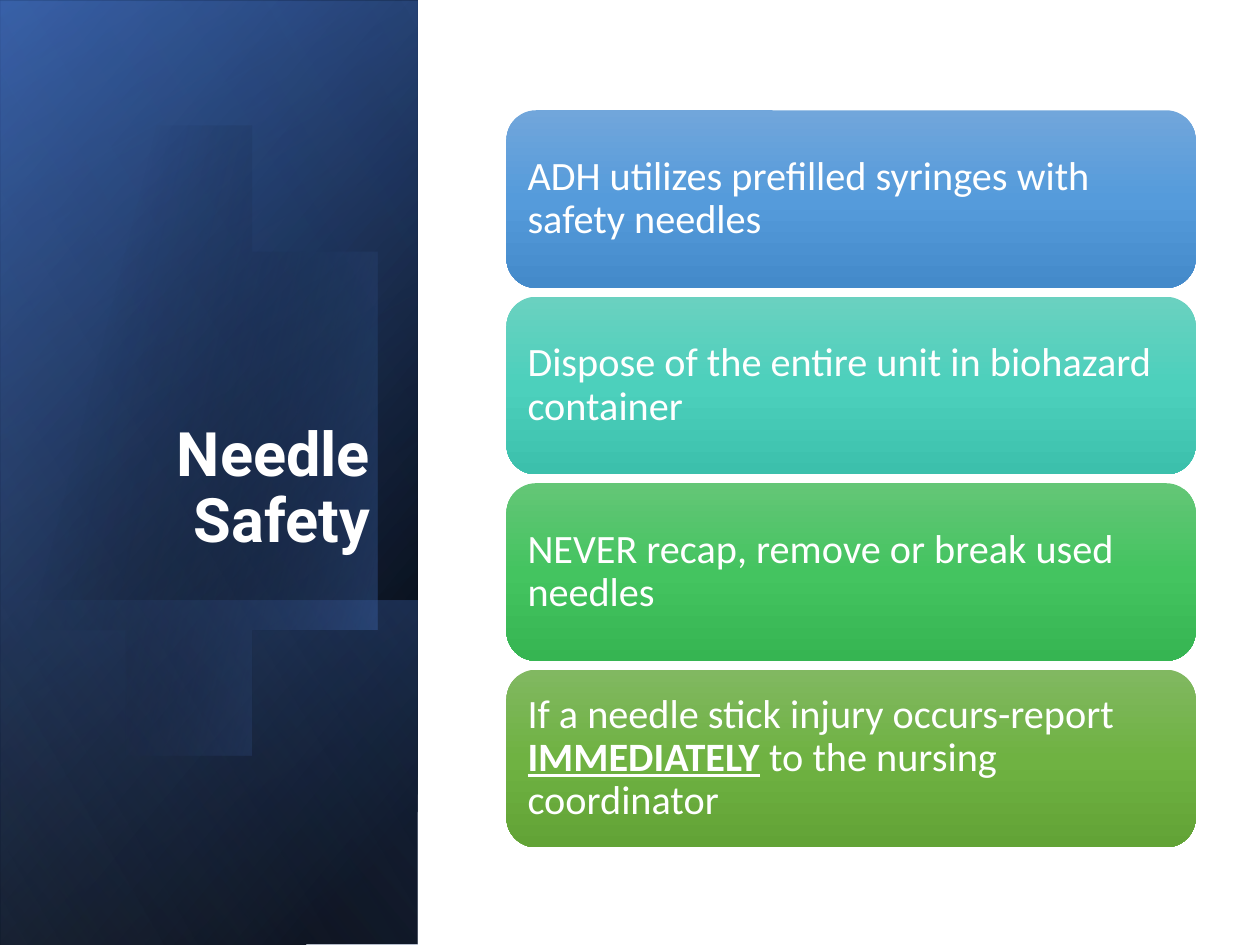
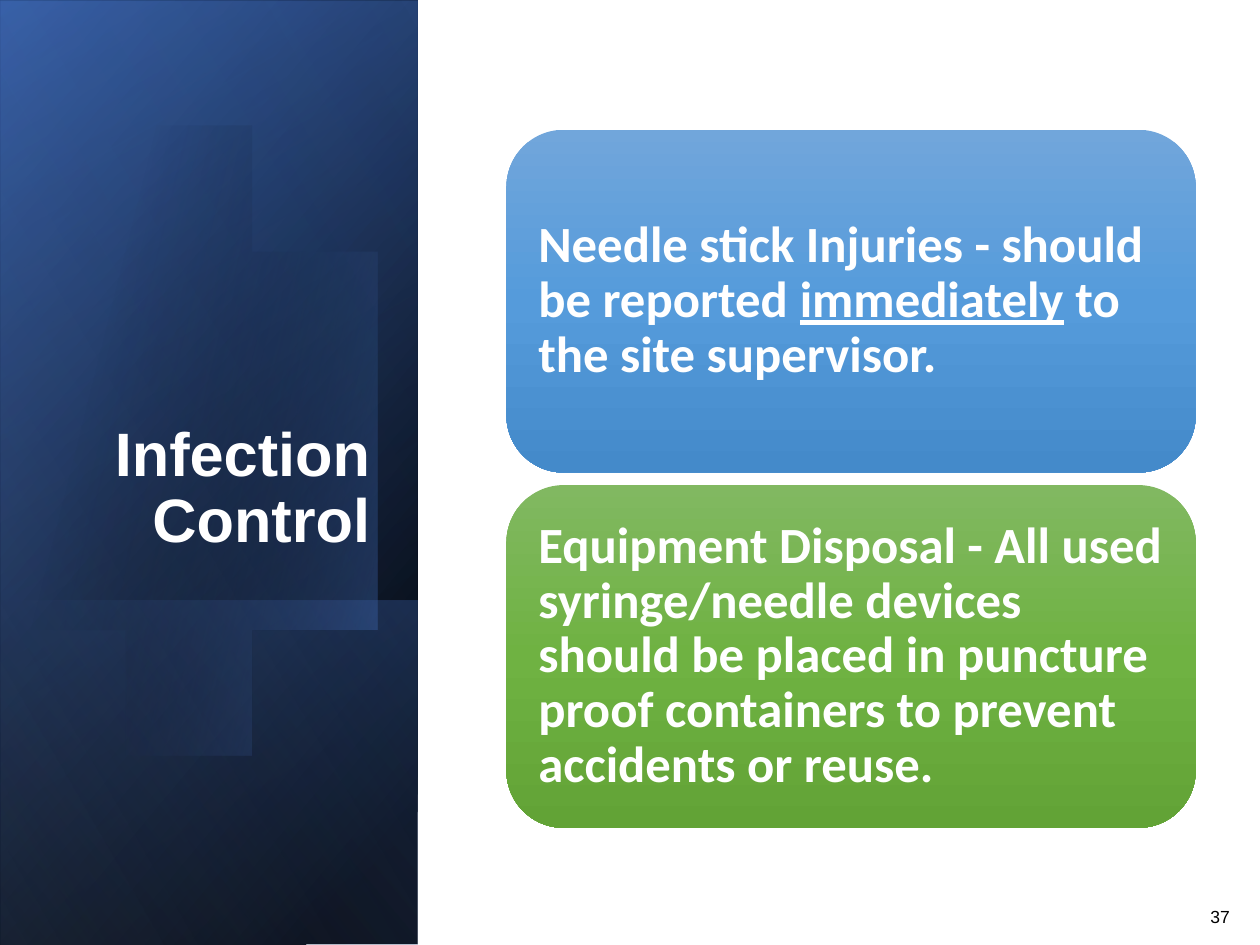
from pptx import Presentation
from pptx.dml.color import RGBColor
from pptx.enum.shapes import MSO_SHAPE
from pptx.enum.text import MSO_ANCHOR, MSO_AUTO_SIZE, PP_ALIGN
from pptx.oxml import parse_xml
from pptx.oxml.ns import nsdecls, qn
from pptx.util import Inches, Pt

RECTANGLE, ROUNDED = MSO_SHAPE.RECTANGLE, MSO_SHAPE.ROUNDED_RECTANGLE
MIDDLE, BOTTOM = MSO_ANCHOR.MIDDLE, MSO_ANCHOR.BOTTOM
LEFT, RIGHT = PP_ALIGN.LEFT, PP_ALIGN.RIGHT
NO_AUTOFIT = MSO_AUTO_SIZE.NONE
TITLE_ONLY = 5

COLORS = {
    "white": "FFFFFF", "black": "000000",
    "navy": "2F5597", "blue": "4472C4", "pale": "8FAADC",
}

# Card gradients, top to bottom: (position %, colour, opacity %)
CARD_FILLS = {
    name: [(0, top, 100), (50, middle, 100), (100, bottom, 100)]
    for name, top, middle, bottom in [
        ("blue", "71A6DB", "559BDB", "448ACA"),
        ("teal", "6AD1C0", "4CD0BC", "3CC0AC"),
        ("green", "64C677", "44C460", "36B552"),
        ("olive", "81B861", "6FB242", "62A336"),
    ]
}

# Content: each card is a fill name and its (text, is emphasised) runs
SLIDES = [
    {
        "title": "Needle Safety", "title_font": "Roboto", "page": None,
        "card_height": 1.41, "gap": 0.07, "inset": 0.1, "size": 23, "bold": False,
        "cards": [
            ("blue", [("ADH utilizes prefilled syringes with safety needles", False)]),
            ("teal", [("Dispose of the entire unit in biohazard container", False)]),
            ("green", [("NEVER recap, remove or break used needles", False)]),
            ("olive", [("If a needle stick injury occurs-report ", False),
                       ("IMMEDIATELY", True),
                       (" to the nursing coordinator", False)]),
        ],
    },
    {
        "title": "Infection Control", "title_font": "Arial", "page": "37",
        "card_height": 2.72, "gap": 0.1, "inset": 0.12, "size": 29, "bold": True,
        "cards": [
            ("blue", [("Needle stick Injuries - should be reported ", False),
                      ("immediately", True),
                      (" to the site supervisor.", False)]),
            ("olive", [("Equipment Disposal - All used syringe/needle devices should be "
                        "placed in puncture proof containers to prevent accidents or "
                        "reuse.", False)]),
        ],
    },
]

# Side panel layers, turned a quarter: (left, top, width, height), stops, angle
BACK_LAYERS = [
    ((-2.09, 2.09, 7.5, 3.31),
     [(8, COLORS["black"], 100), (100, COLORS["navy"], 100)], 50),
    ((-2.09, 2.11, 7.5, 3.31),
     [(0, COLORS["black"], 0), (99, COLORS["blue"], 46)], 30),
    ((0.29, 4.48, 2.74, 3.31),
     [(2, COLORS["blue"], 29), (100, COLORS["black"], 30)], 130),
]
FRONT_LAYER = ((-2.09, 2.09, 7.5, 3.31),
               [(0, COLORS["black"], 0), (99, COLORS["pale"], 11)], 120)

# Egg outline: start point, then lines (one point) and Bezier curves (three)
EGG_START = (0.96, 1.14)
EGG_SEGMENTS = [
    [(1.71, 1.22), (2.44, 1.92), (2.73, 2.9)],
    [(3.07, 4.12), (2.62, 5.31), (1.71, 5.57)],
    [(1.14, 5.74), (0.53, 5.5), (0.07, 5)],
    [(-0.03, 4.88)],
    [(-0.25, 1.66)],
    [(-0.15, 1.54)],
    [(0.02, 1.37), (0.22, 1.25), (0.45, 1.18)],
    [(0.62, 1.13), (0.79, 1.12), (0.96, 1.14)],
]
EGG_STOPS = [(29, COLORS["black"], 0), (100, COLORS["blue"], 43)]
EGG_ANGLE = 14
CURVE_STEPS = 24

TITLE_BOX = (0.48, 1.84, 2.56, 2.62)
PAGE_BOX = (9.46, 7.01, 0.4, 0.4)
CARD_LEFT, CARD_WIDTH, CARDS_CENTER = 4.02, 5.47, 3.8


def box(values):
    return [Inches(value) for value in values]


def paint(shape, stops, angle):
    """Give the shape a linear gradient, no line and no shadow."""
    shape.shadow.inherit = False
    shape.line.fill.background()
    shape.fill.background()
    stop_xml = "".join(
        f'<a:gs pos="{position * 1000}"><a:srgbClr val="{color}">'
        f'<a:alpha val="{opacity * 1000}"/></a:srgbClr></a:gs>'
        for position, color, opacity in stops)
    gradient = parse_xml(
        f'<a:gradFill {nsdecls("a")} rotWithShape="1"><a:gsLst>{stop_xml}</a:gsLst>'
        f'<a:lin ang="{angle * 60000}" scaled="0"/></a:gradFill>')
    properties = shape.element.spPr
    properties.replace(properties.find(qn("a:noFill")), gradient)


def add_layer(slide, place, stops, angle):
    layer = slide.shapes.add_shape(RECTANGLE, *box(place))
    layer.rotation = 90
    layer.element.spPr.find(qn("a:xfrm")).set("flipH", "1")
    paint(layer, stops, angle)


def egg_points():
    current = EGG_START
    for segment in EGG_SEGMENTS:
        if len(segment) == 1:
            yield segment[0]
        else:
            controls = [current, *segment]
            for step in range(1, CURVE_STEPS + 1):
                t = step / CURVE_STEPS
                weights = ((1 - t) ** 3, 3 * t * (1 - t) ** 2, 3 * t * t * (1 - t), t ** 3)
                yield tuple(sum(w * point[axis] for w, point in zip(weights, controls))
                            for axis in (0, 1))
        current = segment[-1]


def add_panel(slide):
    for layer in BACK_LAYERS:
        add_layer(slide, *layer)
    outline = slide.shapes.build_freeform(*EGG_START, scale=Inches(1))
    outline.add_line_segments(list(egg_points()), close=True)
    paint(outline.convert_to_shape(), EGG_STOPS, EGG_ANGLE)
    add_layer(slide, *FRONT_LAYER)


def set_frame(frame, anchor, side_inset, end_inset):
    frame.word_wrap = True
    frame.auto_size = NO_AUTOFIT
    frame.vertical_anchor = anchor
    frame.margin_left = frame.margin_right = Inches(side_inset)
    frame.margin_top = frame.margin_bottom = Inches(end_inset)


def style(paragraph, align, font_name, size, color, bold=False, spacing=0.9):
    paragraph.alignment = align
    paragraph.line_spacing = spacing
    font = paragraph.font
    font.name, font.size, font.bold = font_name, Pt(size), bold
    font.color.rgb = RGBColor.from_string(COLORS[color])


def add_title(slide, text, font_name):
    title = slide.shapes.title
    title.left, title.top, title.width, title.height = box(TITLE_BOX)
    title.text_frame.text = text
    set_frame(title.text_frame, BOTTOM, 0.1, 0.05)
    style(title.text_frame.paragraphs[0], RIGHT, font_name, 35, "white", bold=True)
    # Bring the title in front of the panel
    slide.shapes.element.append(title.element)


def add_page_number(slide, number):
    frame = slide.shapes.add_textbox(*box(PAGE_BOX)).text_frame
    frame.text = number
    set_frame(frame, BOTTOM, 0.1, 0.05)
    style(frame.paragraphs[0], RIGHT, "Arial", 10, "black", spacing=1.0)


def add_cards(slide, content):
    height, gap = content["card_height"], content["gap"]
    count = len(content["cards"])
    first_top = CARDS_CENTER - (count * height + (count - 1) * gap) / 2
    for index, (fill_name, runs) in enumerate(content["cards"]):
        top = first_top + index * (height + gap)
        card = slide.shapes.add_shape(ROUNDED, *box((CARD_LEFT, top, CARD_WIDTH, height)))
        paint(card, CARD_FILLS[fill_name], 90)
        set_frame(card.text_frame, MIDDLE, content["inset"], content["inset"])
        paragraph = card.text_frame.paragraphs[0]
        style(paragraph, LEFT, "Calibri", content["size"], "white", content["bold"])
        for text, emphasised in runs:
            run = paragraph.add_run()
            run.text = text
            if emphasised:
                run.font.bold = run.font.underline = True


def main():
    deck = Presentation()
    deck.slide_width, deck.slide_height = Inches(10), Inches(7.5)
    for content in SLIDES:
        slide = deck.slides.add_slide(deck.slide_layouts[TITLE_ONLY])
        add_panel(slide)
        add_title(slide, content["title"], content["title_font"])
        if content["page"]:
            add_page_number(slide, content["page"])
        add_cards(slide, content)
    deck.save("out.pptx")


if __name__ == "__main__":
    main()
